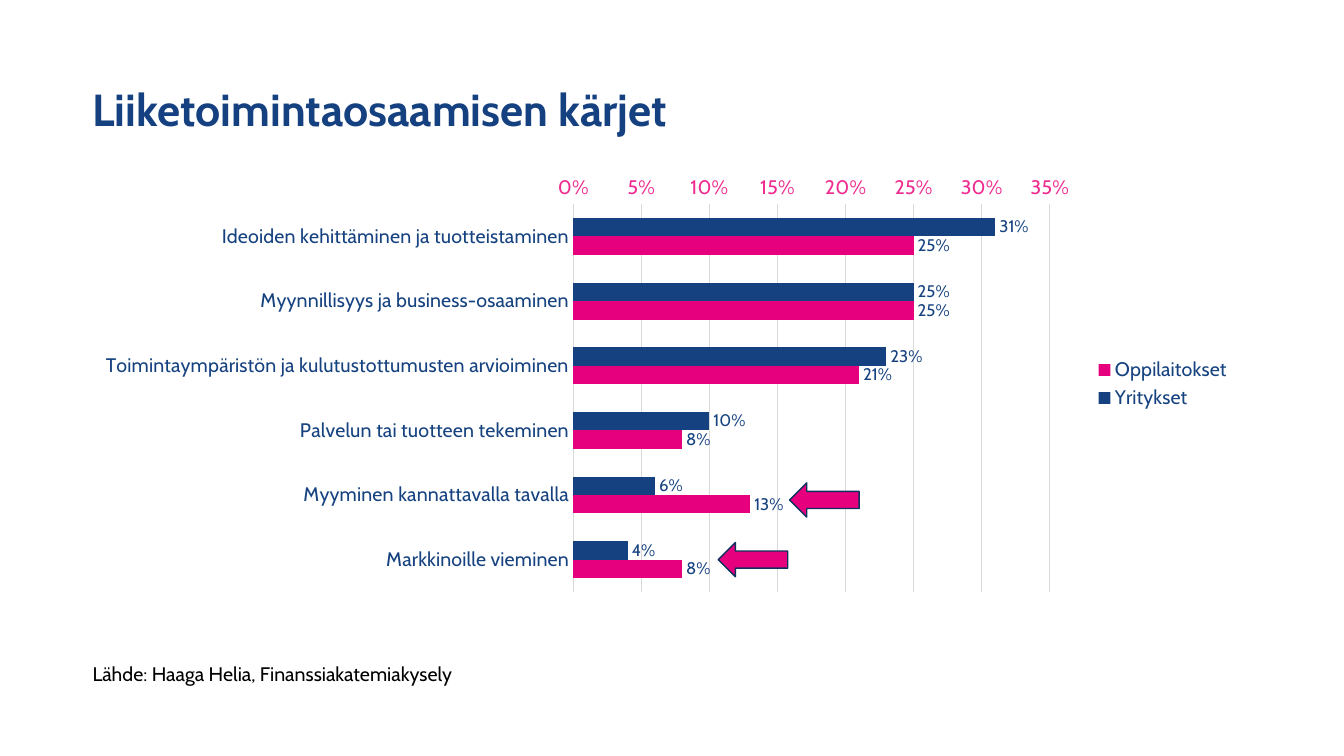
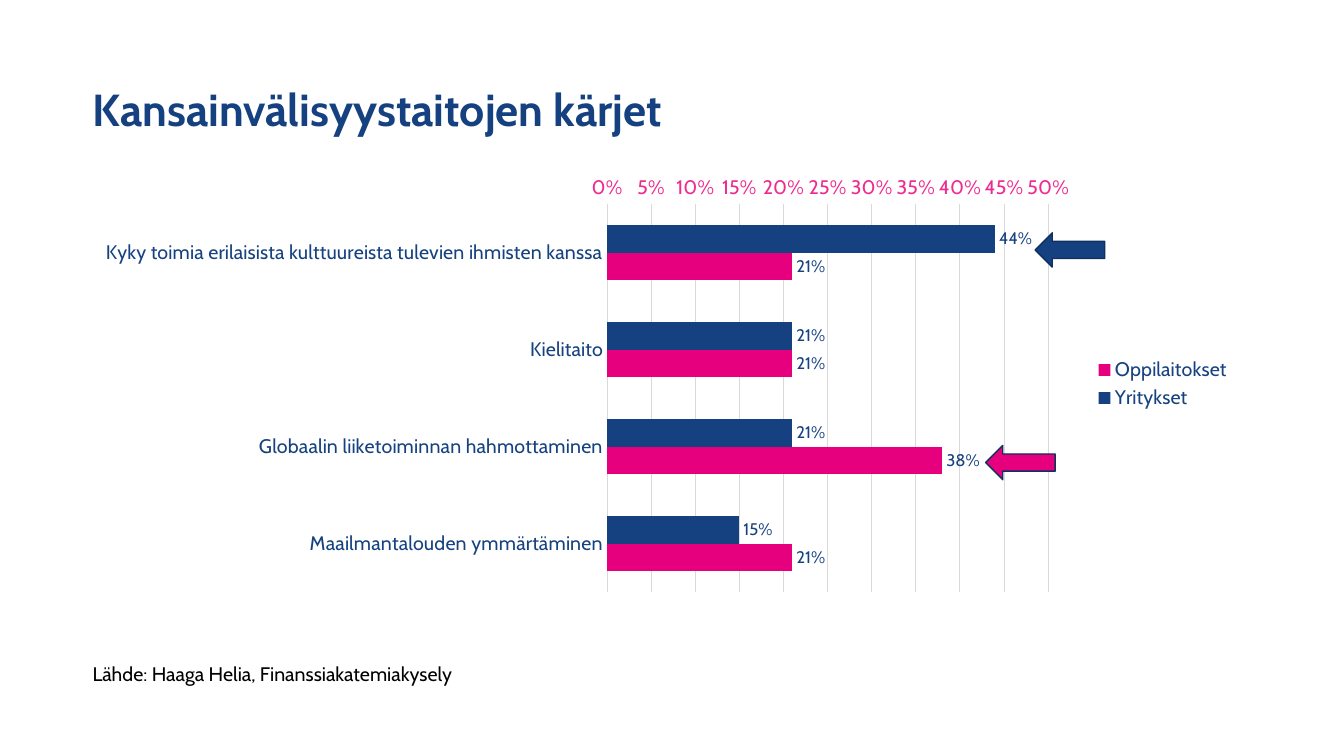
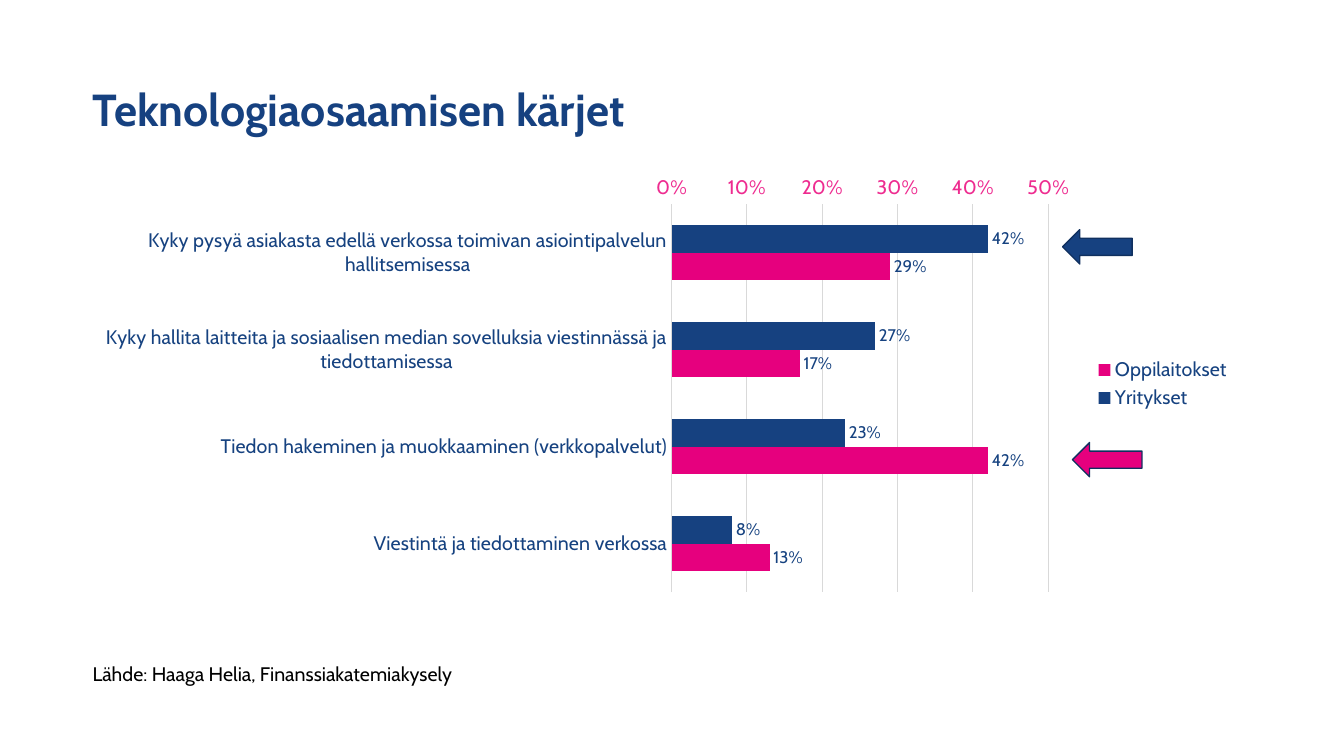
from dataclasses import dataclass

from pptx import Presentation
from pptx.chart.data import CategoryChartData
from pptx.dml.color import RGBColor
from pptx.enum.chart import XL_CHART_TYPE, XL_LABEL_POSITION, XL_LEGEND_POSITION, XL_TICK_MARK
from pptx.enum.shapes import MSO_SHAPE
from pptx.enum.text import MSO_ANCHOR
from pptx.util import Pt


@dataclass(frozen=True)
class Theme:
    font: str = "Cabin"
    navy: str = "164180"
    pink: str = "E6007E"
    label: str = "164280"
    axis: str = "EE2C90"
    grid: str = "D9D9D9"
    outline: str = "10305F"
    black: str = "000000"
    title_size: int = 32
    body_size: int = 14
    value_size: int = 12


THEME = Theme()
SLIDE_SIZE = (960, 540)
TITLE_BOX = (59, 28, 828, 104.4)
CHART_BOX = (59, 119.5, 828, 309.6)
SOURCE_BOX = (59, 469.4, 314, 24.2)
ARROW_SIZE = (49.7, 24.5)

SOURCE = "Lähde: Haaga Helia, Finanssiakatemiakysely"
SERIES = (("Yritykset", THEME.navy), ("Oppilaitokset", THEME.pink))

# Arrows: left and top inside the chart box, then fill colour.
SLIDES = [
    dict(
        title="Liiketoimintaosaamisen kärjet",
        rows=[
            ("Ideoiden kehittäminen ja tuotteistaminen", 0.31, 0.25),
            ("Myynnillisyys ja business-osaaminen", 0.25, 0.25),
            ("Toimintaympäristön ja kulutustottumusten arvioiminen", 0.23, 0.21),
            ("Palvelun tai tuotteen tekeminen", 0.10, 0.08),
            ("Myyminen kannattavalla tavalla", 0.06, 0.13),
            ("Markkinoille vieminen", 0.04, 0.08),
        ],
        scale=(0.35, 0.05),
        arrows=[(505, 225.4, THEME.pink), (454, 268, THEME.pink)],
    ),
    dict(
        title="Kansainvälisyystaitojen kärjet",
        rows=[
            ("Kyky toimia erilaisista kulttuureista tulevien ihmisten kanssa", 0.44, 0.21),
            ("Kielitaito", 0.21, 0.21),
            ("Globaalin liiketoiminnan hahmottaminen", 0.21, 0.38),
            ("Maailmantalouden ymmärtäminen", 0.15, 0.21),
        ],
        scale=(0.5, 0.05),
        arrows=[(680.4, 46.8, THEME.navy), (645, 198.7, THEME.pink)],
    ),
    dict(
        title="Teknologiaosaamisen kärjet",
        rows=[
            ("Kyky pysyä asiakasta edellä verkossa toimivan asiointipalvelun hallitsemisessa", 0.42, 0.29),
            ("Kyky hallita laitteita ja sosiaalisen median sovelluksia viestinnässä ja tiedottamisessa",
             0.27, 0.17),
            ("Tiedon hakeminen ja muokkaaminen (verkkopalvelut)", 0.23, 0.42),
            ("Viestintä ja tiedottaminen verkossa", 0.08, 0.13),
        ],
        scale=(0.5, 0.1),
        arrows=[(700, 44.6, THEME.navy), (707, 196.6, THEME.pink)],
    ),
]


def points(*lengths):
    return [Pt(length) for length in lengths]


def rgb(colour):
    return RGBColor.from_string(colour)


def style_font(font, size, colour, bold=False):
    font.name = THEME.font
    font.size = Pt(size)
    font.bold = bold
    font.color.rgb = rgb(colour)


def style_line(line, colour, width):
    line.color.rgb = rgb(colour)
    line.width = Pt(width)


def paint(fill, colour):
    fill.solid()
    fill.fore_color.rgb = rgb(colour)


def add_text(s, box, text, size, colour, bold=False, wrap=True):
    tf = s.shapes.add_textbox(*points(*box)).text_frame
    tf.word_wrap = wrap
    tf.text = text
    p = tf.paragraphs[0]
    style_font(p.runs[0].font, size, colour, bold)
    return tf


def add_title(s, box, text):
    tf = add_text(s, box, text, THEME.title_size, THEME.navy, bold=True)
    tf.vertical_anchor = MSO_ANCHOR.MIDDLE
    tf.paragraphs[0].line_spacing = 0.9


def style_axes(chart, maximum, step):
    categories, values = chart.category_axis, chart.value_axis
    for axis, colour in ((categories, THEME.label), (values, THEME.axis)):
        axis.major_tick_mark = axis.minor_tick_mark = XL_TICK_MARK.NONE
        style_font(axis.tick_labels.font, THEME.body_size, colour)
    categories.reverse_order = True
    categories.has_major_gridlines = False
    style_line(categories.format.line, THEME.grid, 0.75)
    values.minimum_scale, values.maximum_scale, values.major_unit = 0, maximum, step
    values.tick_labels.number_format = "0%"
    values.tick_labels.number_format_is_linked = False
    values.format.line.fill.background()
    values.has_major_gridlines = True
    style_line(values.major_gridlines.format.line, THEME.grid, 0.75)


def style_bars(plot):
    plot.gap_width, plot.overlap = 150, 0
    plot.vary_by_categories = False
    for series, (_, colour) in zip(plot.series, SERIES):
        paint(series.format.fill, colour)
        series.invert_if_negative = False
        labels = series.data_labels
        labels.show_value = True
        labels.number_format = "0%"
        labels.number_format_is_linked = False
        labels.position = XL_LABEL_POSITION.OUTSIDE_END
        style_font(labels.font, THEME.value_size, THEME.label)


def add_bar_chart(s, box, rows, scale):
    names, *columns = zip(*rows)
    data = CategoryChartData(number_format="0%")
    data.categories = names
    for (name, _), values in zip(SERIES, columns):
        data.add_series(name, values)
    chart = s.shapes.add_chart(XL_CHART_TYPE.BAR_CLUSTERED, *points(*box), data).chart
    chart.has_title = False
    style_font(chart.font, THEME.body_size, THEME.label)
    chart.has_legend = True
    chart.legend.position = XL_LEGEND_POSITION.RIGHT
    chart.legend.include_in_layout = False
    style_font(chart.legend.font, THEME.body_size, THEME.label)
    style_axes(chart, *scale)
    style_bars(chart.plots[0])


def add_arrows(s, box, arrows):
    left, top = box[:2]
    for dx, dy, colour in arrows:
        sp = s.shapes.add_shape(MSO_SHAPE.LEFT_ARROW, *points(left + dx, top + dy, *ARROW_SIZE))
        sp.shadow.inherit = False
        paint(sp.fill, colour)
        style_line(sp.line, THEME.outline, 1)


def add_survey_slide(prs, title, rows, scale, arrows):
    s = prs.slides.add_slide(prs.slide_layouts[6])
    add_title(s, TITLE_BOX, title)
    add_bar_chart(s, CHART_BOX, rows, scale)
    add_text(s, SOURCE_BOX, SOURCE, THEME.body_size, THEME.black, wrap=False)
    add_arrows(s, CHART_BOX, arrows)


def main():
    prs = Presentation()
    prs.slide_width, prs.slide_height = points(*SLIDE_SIZE)
    for content in SLIDES:
        add_survey_slide(prs, **content)
    prs.save("out.pptx")


if __name__ == "__main__":
    main()
